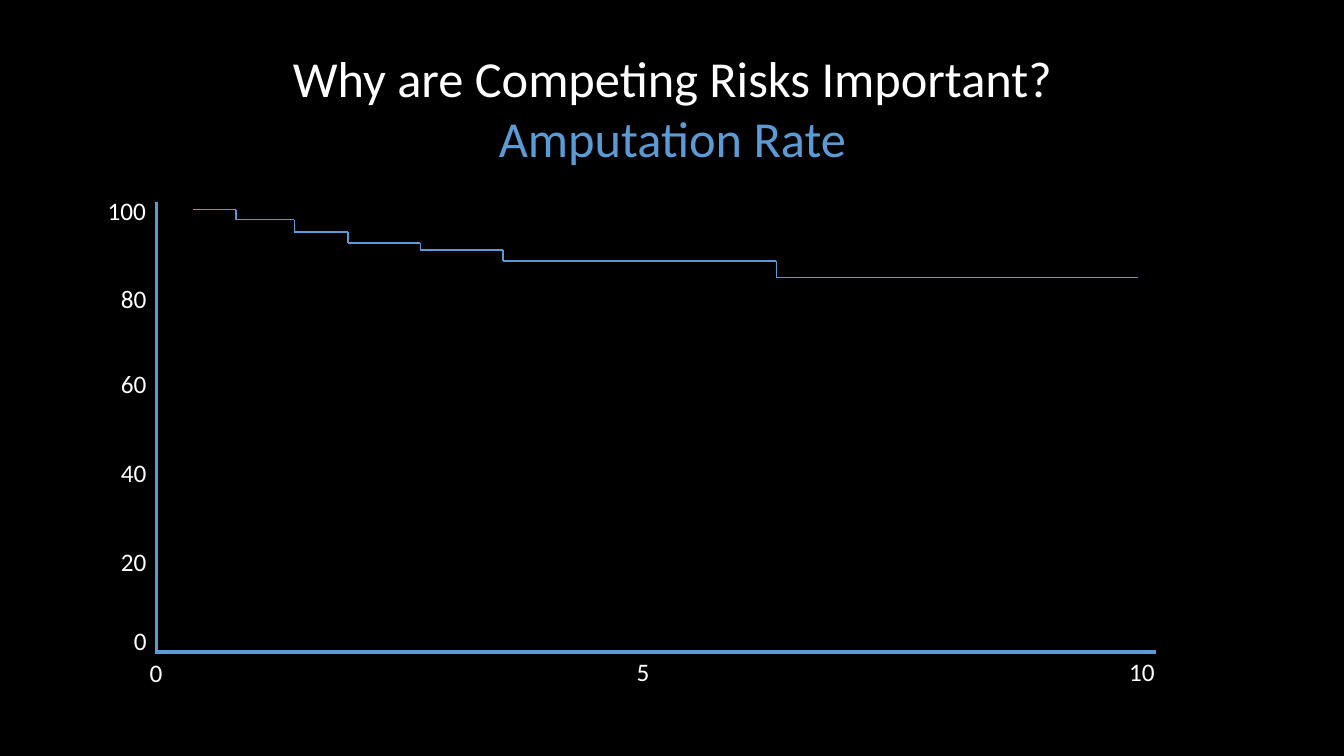
from itertools import pairwise

from lxml import etree
from pptx import Presentation
from pptx.dml.color import RGBColor
from pptx.enum.shapes import MSO_CONNECTOR
from pptx.enum.text import MSO_ANCHOR, MSO_AUTO_SIZE, PP_ALIGN
from pptx.oxml.ns import qn
from pptx.util import Inches, Pt

STRAIGHT = MSO_CONNECTOR.STRAIGHT
MIDDLE = MSO_ANCHOR.MIDDLE
FIT_SHAPE = MSO_AUTO_SIZE.SHAPE_TO_FIT_TEXT
NO_FIT = MSO_AUTO_SIZE.NONE
CENTER = PP_ALIGN.CENTER

TITLE_ONLY = 5
FONT = "Calibri"
BLACK, WHITE, BLUE = "000000", "FFFFFF", "5B9BD5"

# Axis labels: rate by top edge, years by centre and top edge
RATE_LABELS = [("100", 1.89), ("80", 2.76), ("60", 3.61),
               ("40", 4.49), ("20", 5.37), ("0", 6.15)]
YEAR_LABELS = [("0", 1.55, 6.47), ("5", 6.38, 6.46), ("10", 11.33, 6.46)]
RATE_LABEL_RIGHT = 1.56

# Survival steps: start of each level and its height
STEPS = [(1.91, 2.08), (2.34, 2.18), (2.92, 2.3), (3.45, 2.41),
         (4.17, 2.48), (4.99, 2.59), (7.7, 2.75)]
CURVE_END = 11.29


def color(hex_value):
    return RGBColor.from_string(hex_value)


def add_run(para, text, size, hex_value):
    span = para.add_run()
    span.text = text
    span.font.name = FONT
    span.font.size = Pt(size)
    span.font.color.rgb = color(hex_value)


def set_title(page):
    title = page.shapes.title
    title.left, title.top = Inches(2.36), Inches(0.41)
    title.width, title.height = Inches(8.62), Inches(1.31)
    frame = title.text_frame
    frame.word_wrap = True
    frame.auto_size = NO_FIT
    frame.vertical_anchor = MIDDLE
    lines = [("Why are Competing Risks Important?", WHITE),
             ("Amputation Rate", BLUE)]
    for index, (text, hex_value) in enumerate(lines):
        para = frame.add_paragraph() if index else frame.paragraphs[0]
        para.alignment = CENTER
        para.space_before = Pt(0)
        add_run(para, text, 36, hex_value)


def label_width(text):
    return 0.2 + 0.13 * len(text)


def add_label(page, text, left, top):
    box = page.shapes.add_textbox(Inches(left), Inches(top),
                                  Inches(label_width(text)), Inches(0.4))
    frame = box.text_frame
    frame.word_wrap = False
    frame.auto_size = FIT_SHAPE
    add_run(frame.paragraphs[0], text, 18, WHITE)


def add_line(page, start, end, weight):
    line = page.shapes.add_connector(STRAIGHT, *map(Inches, start + end))
    line.line.color.rgb = color(BLUE)
    line.line.width = Pt(weight)
    etree.SubElement(line._element.spPr, qn("a:effectLst"))


def add_axes(page):
    add_line(page, (1.55, 2), (1.55, 6.48), 2.5)
    add_line(page, (1.54, 6.47), (11.47, 6.47), 2.5)
    for text, top in RATE_LABELS:
        add_label(page, text, RATE_LABEL_RIGHT - label_width(text), top)
    for text, middle, top in YEAR_LABELS:
        add_label(page, text, middle - label_width(text) / 2, top)


def add_curve(page):
    last_level = STEPS[-1][1]
    for (x, y), (next_x, next_y) in pairwise(STEPS + [(CURVE_END, last_level)]):
        add_line(page, (x, y), (next_x, y), 1)
        if next_y != y:
            add_line(page, (next_x, y), (next_x, next_y), 1)


def main():
    deck = Presentation()
    deck.slide_width, deck.slide_height = Inches(13.33), Inches(7.5)
    page = deck.slides.add_slide(deck.slide_layouts[TITLE_ONLY])
    page.background.fill.solid()
    page.background.fill.fore_color.rgb = color(BLACK)
    set_title(page)
    add_axes(page)
    add_curve(page)
    deck.save("out.pptx")


if __name__ == "__main__":
    main()
